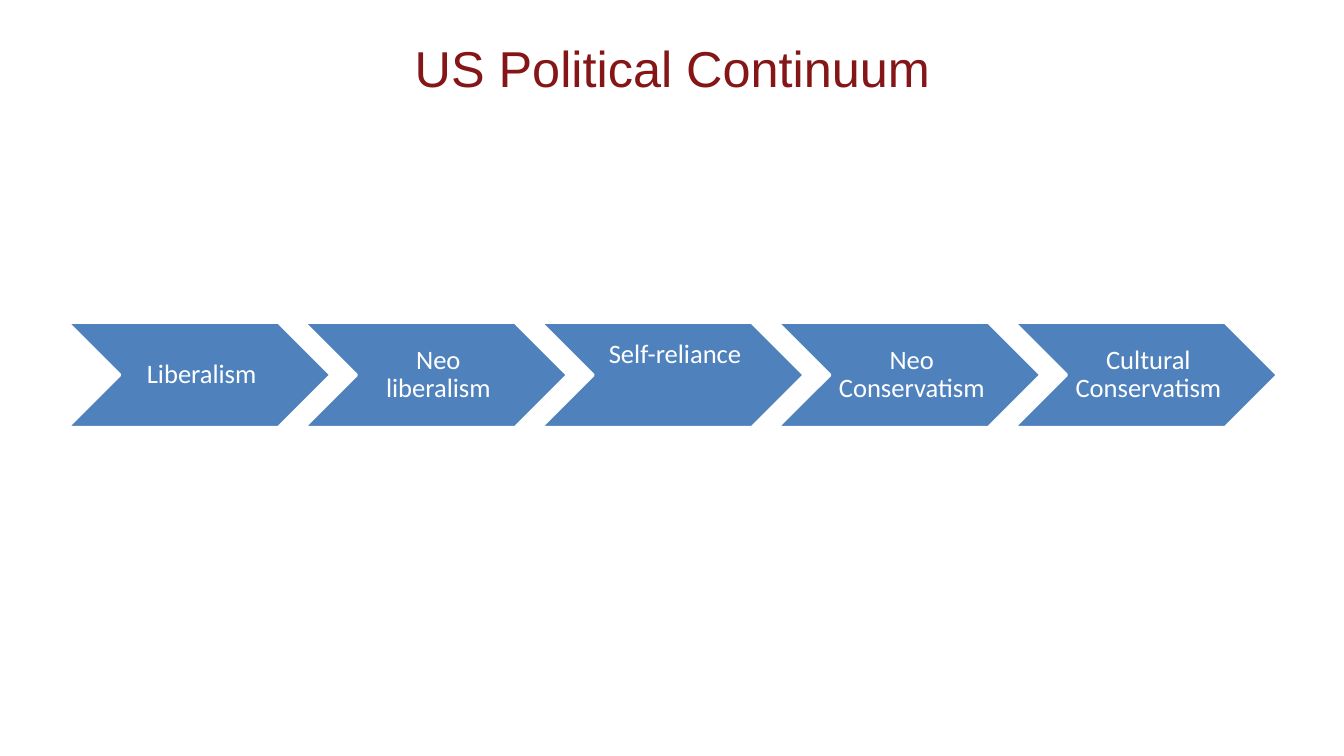
from dataclasses import dataclass

from pptx import Presentation
from pptx.dml.color import RGBColor
from pptx.enum.shapes import MSO_SHAPE
from pptx.enum.text import MSO_ANCHOR, PP_ALIGN
from pptx.util import Inches, Pt

CHEVRON = MSO_SHAPE.CHEVRON
MIDDLE = MSO_ANCHOR.MIDDLE
CENTER = PP_ALIGN.CENTER
TITLE_ONLY = 5


@dataclass(frozen=True)
class Theme:
    title_color: RGBColor = RGBColor(0x84, 0x16, 0x17)
    step_fill: RGBColor = RGBColor(0x4F, 0x81, 0xBD)
    white: RGBColor = RGBColor(0xFF, 0xFF, 0xFF)
    title_font: str = "Arial"
    step_font: str = "Calibri"
    title_size: Pt = Pt(36)
    step_size: Pt = Pt(19)


THEME = Theme()
STEP_WIDTH = 2.61
INSET = 0.03
RAISED_INSET = 0.42  # bottom inset that lifts a label by half a line
STEPS = [
    ("Liberalism", INSET),
    ("Neo liberalism", INSET),
    ("Self-reliance", RAISED_INSET),
    ("Neo Conservatism", INSET),
    ("Cultural Conservatism", INSET),
]


def format_text(tf, font, size, color):
    tf.word_wrap = True
    tf.vertical_anchor = MIDDLE
    p = tf.paragraphs[0]
    p.alignment = CENTER
    for r in p.runs:
        r.font.name = font
        r.font.size = size
        r.font.color.rgb = color


def add_title(slide, text, left, top, width, height):
    sp = slide.shapes.title
    sp.left, sp.top = Inches(left), Inches(top)
    sp.width, sp.height = Inches(width), Inches(height)
    sp.text_frame.text = text
    format_text(sp.text_frame, THEME.title_font, THEME.title_size,
                THEME.title_color)


def add_step(slide, text, bottom_inset, left, top, width, height):
    sp = slide.shapes.add_shape(CHEVRON, Inches(left), Inches(top),
                                Inches(width), Inches(height))
    sp.shadow.inherit = False
    sp.fill.solid()
    sp.fill.fore_color.rgb = THEME.step_fill
    sp.line.color.rgb = THEME.white
    sp.line.width = Pt(2)
    tf = sp.text_frame
    tf.margin_left = Inches(0.08)
    tf.margin_top = tf.margin_right = Inches(INSET)
    tf.margin_bottom = Inches(bottom_inset)
    tf.text = text
    tf.paragraphs[0].line_spacing = 0.9
    format_text(tf, THEME.step_font, THEME.step_size, THEME.white)


def add_continuum(slide, steps, left, top, width, height):
    """Spread overlapping chevrons evenly across the box."""
    pitch = (width - STEP_WIDTH) / (len(steps) - 1)
    for i, (text, bottom_inset) in enumerate(steps):
        add_step(slide, text, bottom_inset, left + i * pitch, top,
                 STEP_WIDTH, height)


def main():
    prs = Presentation()
    prs.slide_width, prs.slide_height = Inches(13.33), Inches(7.5)
    slide = prs.slides.add_slide(prs.slide_layouts[TITLE_ONLY])
    add_title(slide, "US Political Continuum", 0.67, 0.3, 12, 0.74)
    add_continuum(slide, STEPS, 0.67, 3.2, 12, 1.04)
    prs.save("out.pptx")


if __name__ == "__main__":
    main()
